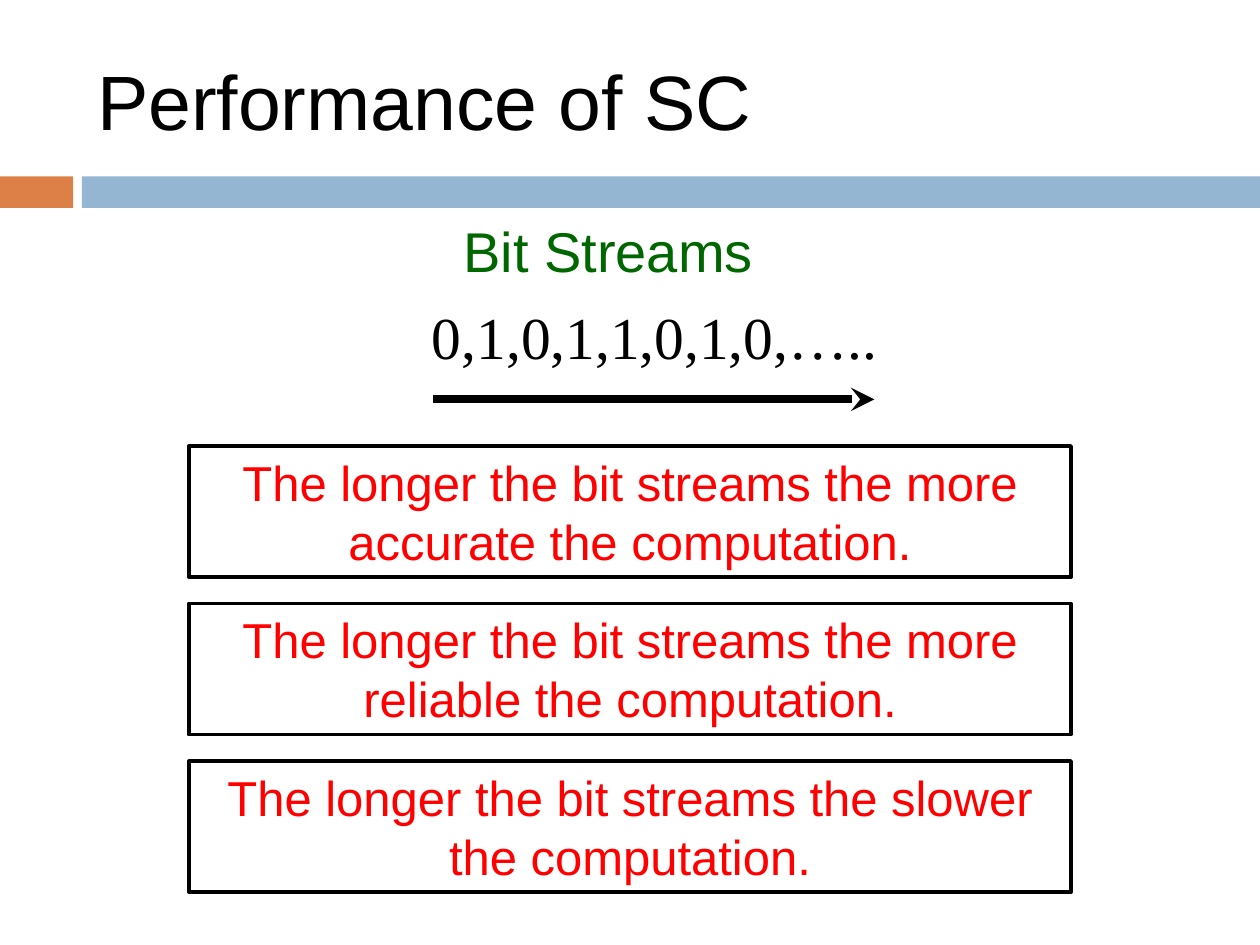
from pptx import Presentation
from pptx.dml.color import RGBColor
from pptx.enum import shapes, text
from pptx.oxml.ns import qn
from pptx.util import Inches, Pt
from lxml import etree

COLORS = {
    "accent": "DD8047",
    "band": "94B6D2",
    "heading": "006600",
    "claim": "FF0000",
    "black": "000000",
    "white": "FFFFFF",
}
CLAIMS = [
    "The longer the bit streams the more accurate the computation.",
    "The longer the bit streams the more reliable the computation.",
    "The longer the bit streams the slower the computation.",
]


def color(name):
    return RGBColor.from_string(COLORS[name])


def write(shape, words, size, color_name, font_name="Arial",
          align=text.PP_ALIGN.LEFT, anchor=text.MSO_ANCHOR.TOP, wrap=True):
    frame = shape.text_frame
    frame.word_wrap = wrap
    frame.vertical_anchor = anchor
    frame.text = words
    paragraph = frame.paragraphs[0]
    paragraph.alignment = align
    paragraph.font.name = font_name
    paragraph.font.size = Pt(size)
    paragraph.font.color.rgb = color(color_name)


def add_box(slide, left, top, width, height, fill, line=None):
    box = slide.shapes.add_shape(
        shapes.MSO_SHAPE.RECTANGLE,
        Inches(left), Inches(top), Inches(width), Inches(height))
    box.shadow.inherit = False
    box.fill.solid()
    box.fill.fore_color.rgb = color(fill)
    if line:
        box.line.color.rgb = color(line)
        box.line.width = Pt(2.25)
    else:
        box.line.fill.background()
    return box


def add_label(slide, left, top, width, height, words, size, color_name, font_name="Arial"):
    label = slide.shapes.add_textbox(
        Inches(left), Inches(top), Inches(width), Inches(height))
    write(label, words, size, color_name, font_name, wrap=False)


def add_arrow(slide, left, top, length):
    arrow = slide.shapes.add_connector(
        shapes.MSO_CONNECTOR.STRAIGHT,
        Inches(left), Inches(top), Inches(left + length), Inches(top))
    arrow.line.color.rgb = color("black")
    arrow.line.width = Pt(4.5)
    etree.SubElement(arrow.line._get_or_add_ln(), qn("a:tailEnd"), type="stealth")
    etree.SubElement(arrow._element.spPr, qn("a:effectLst"))


def add_header(slide, band_top, band_height, accent_width, gap, slide_width):
    """Place the title and the two-coloured band below it."""
    band_left = accent_width + gap
    add_box(slide, 0, band_top, accent_width, band_height, "accent")
    add_box(slide, band_left, band_top, slide_width - band_left, band_height, "band")
    title = slide.shapes.title
    title.left, title.top = Inches(0.67), Inches(0.25)
    title.width, title.height = Inches(8.92), Inches(1.08)
    write(title, "Performance of SC", 44, "black", anchor=text.MSO_ANCHOR.MIDDLE)


def add_bit_stream(slide, left, top):
    add_label(slide, left + 0.25, top, 2.52, 0.64, "Bit Streams", 32, "heading")
    add_label(slide, left, top + 0.66, 3.78, 0.67,
              "0,1,0,1,1,0,1,0,…..", 34, "black", "Times New Roman")
    add_arrow(slide, left + 0.11, top + 1.5, 3.5)


def add_claims(slide, left, top, width, height, pitch):
    for row, claim in enumerate(CLAIMS):
        box = add_box(slide, left, top + row * pitch, width, height, "white", "black")
        write(box, claim, 28, "claim", align=text.PP_ALIGN.CENTER)


def main():
    presentation = Presentation()
    presentation.slide_width, presentation.slide_height = Inches(10), Inches(7.5)
    slide = presentation.slides.add_slide(presentation.slide_layouts[5])
    add_header(slide, 1.4, 0.25, 0.58, 0.07, 10)
    add_bit_stream(slide, 3.33, 1.67)
    add_claims(slide, 1.5, 3.54, 7, 1.04, 1.25)
    presentation.save("out.pptx")


if __name__ == "__main__":
    main()
